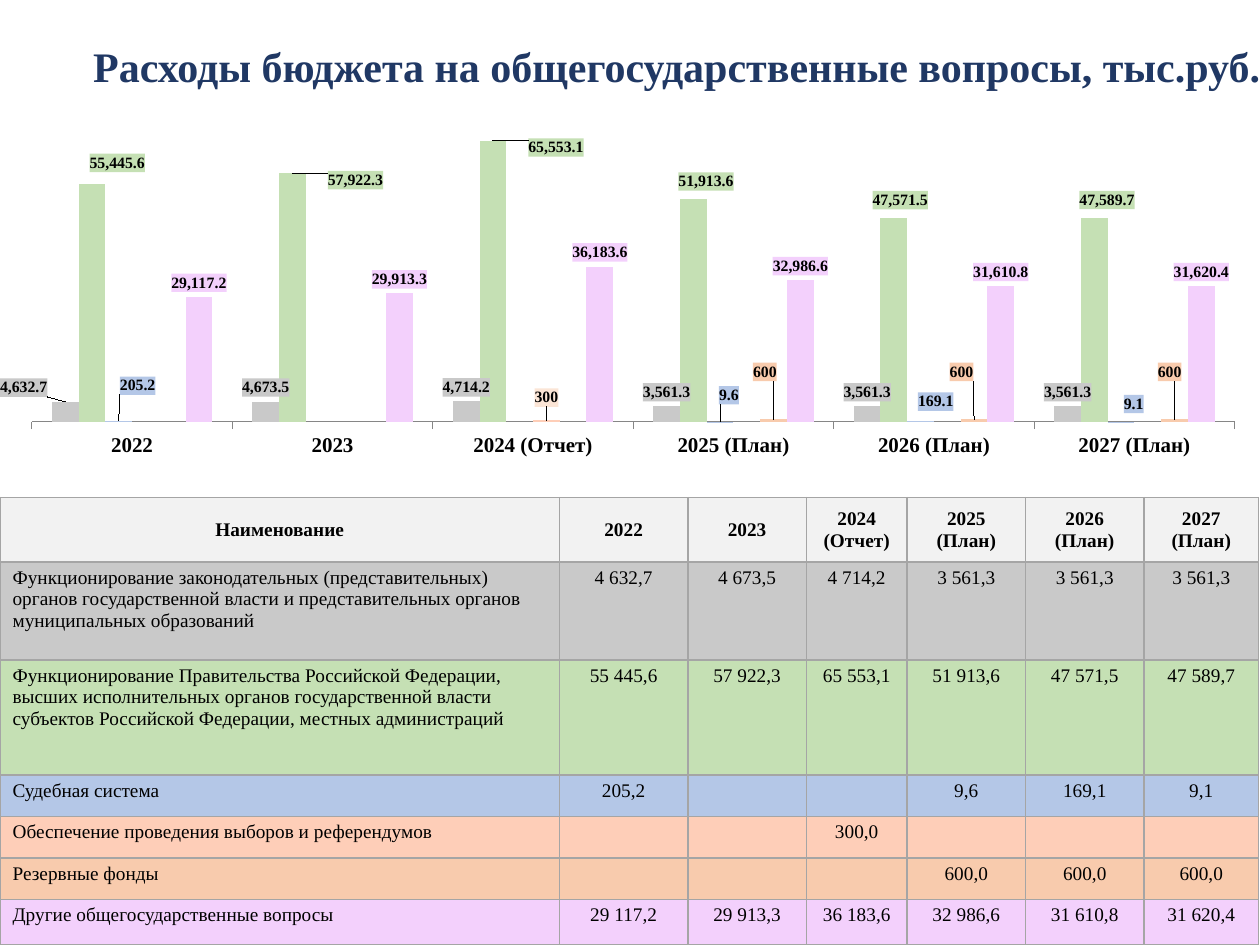
from copy import deepcopy
from dataclasses import dataclass, field

from pptx import Presentation
from pptx.chart.data import CategoryChartData
from pptx.dml.color import RGBColor
from pptx.enum.chart import XL_CHART_TYPE, XL_LABEL_POSITION, XL_TICK_LABEL_POSITION, XL_TICK_MARK
from pptx.enum.text import MSO_ANCHOR, PP_ALIGN
from pptx.oxml import parse_xml
from pptx.oxml.ns import nsdecls, qn
from pptx.util import Inches, Pt

COLUMNS = XL_CHART_TYPE.COLUMN_CLUSTERED
OUTSIDE = XL_LABEL_POSITION.OUTSIDE_END
LOW = XL_TICK_LABEL_POSITION.LOW
TICK_OUT, TICK_NONE = XL_TICK_MARK.OUTSIDE, XL_TICK_MARK.NONE
LEFT, CENTER, RIGHT = PP_ALIGN.LEFT, PP_ALIGN.CENTER, PP_ALIGN.RIGHT
TOP, MIDDLE = MSO_ANCHOR.TOP, MSO_ANCHOR.MIDDLE

SERIF = "Times New Roman"
BLACK, NAVY, GREY, HEADER = "000000", "203864", "A5A5A5", "F2F2F2"
THOUSANDS = "#,##0.0"


@dataclass
class Expense:
    name: str
    color: str
    values: list
    # point index -> label shift as fractions of the chart width and height
    shifts: dict = field(default_factory=dict)
    fmt: str = THOUSANDS
    label_fill: str = ""


YEARS = ["2022", "2023", "2024 (Отчет)", "2025 (План)", "2026 (План)", "2027 (План)"]
EXPENSES = [
    Expense("Функционирование законодательных (представительных) органов государственной "
            "власти и представительных органов муниципальных образований", "C9C9C9",
            [4632.7, 4673.5, 4714.2, 3561.3, 3561.3, 3561.3], {0: (-0.033, 0)}),
    Expense("Функционирование Правительства Российской Федерации, высших исполнительных органов "
            "государственной власти субъектов Российской Федерации, местных администраций",
            "C5E0B4", [55445.6, 57922.3, 65553.1, 51913.6, 47571.5, 47589.7],
            {0: (0.02, -0.02), 1: (0.05, 0.06), 2: (0.05, 0.06),
             3: (0.01, -0.01), 4: (0.005, -0.01), 5: (0.01, -0.01)}),
    Expense("Судебная система", "B4C7E7", [205.2, None, None, 9.6, 169.1, 9.1],
            {0: (0.015, -0.06), 3: (0.007, -0.035), 4: (0.012, -0.015), 5: (0.01, -0.01)},
            "General"),
    Expense("Обеспечение проведения выборов и референдумов", "FECEB8",
            [None, None, 300, None, None, None], {2: (0, -0.025)}, "General", "FBE5D6"),
    Expense("Резервные фонды", "F8CBAD", [None, None, None, 600, 600, 600],
            {3: (-0.007, -0.095), 4: (-0.01, -0.095), 5: (-0.004, -0.095)}, "General"),
    Expense("Другие общегосударственные вопросы", "F3D0FC",
            [29117.2, 29913.3, 36183.6, 32986.6, 31610.8, 31620.4]),
]
COL_WIDTHS = [4.44, 1.02, 0.94, 0.8, 0.94, 0.94, 0.91]
ROW_HEIGHTS = [0.51, 0.78, 0.91, 0.33, 0.33, 0.33, 0.36]


def rgb(value: str) -> RGBColor:
    return RGBColor.from_string(value)


def set_font(font, size: float, color: str = BLACK, bold: bool = False) -> None:
    for name, value in {"name": SERIF, "size": Pt(size), "bold": bold}.items():
        setattr(font, name, value)
    font.color.rgb = rgb(color)


def layout_xml(body: str):
    return parse_xml(f'<c:layout {nsdecls("c")}><c:manualLayout>{body}'
                     '</c:manualLayout></c:layout>')


def add_title(slide, text: str) -> None:
    sp = slide.shapes.add_textbox(Inches(0.25), Inches(0.27), Inches(9.85), Inches(0.5))
    tf = sp.text_frame
    tf.word_wrap = True
    p = tf.paragraphs[0]
    p.alignment = RIGHT
    r = p.add_run()
    r.text = text
    set_font(r.font, 24, NAVY, True)


def style_labels(series, item: Expense) -> None:
    labels = series.data_labels
    options = {"show_value": True, "position": OUTSIDE, "number_format": item.fmt,
               "number_format_is_linked": False}
    for name, value in options.items():
        setattr(labels, name, value)
    set_font(labels.font, 9, bold=True)

    # Coloured label background
    dLbls = series._element.find(qn("c:dLbls"))
    dLbls.find(qn("c:txPr")).addprevious(parse_xml(
        f'<c:spPr {nsdecls("c", "a")}><a:solidFill>'
        f'<a:srgbClr val="{item.label_fill or item.color}"/></a:solidFill></c:spPr>'))

    # Shifted labels share the formatting of their series
    shared = [el for el in dLbls if el.tag != qn("c:showLeaderLines")]
    for pos, (idx, (dx, dy)) in enumerate(item.shifts.items()):
        dLbl = parse_xml(f'<c:dLbl {nsdecls("c")}><c:idx val="{idx}"/></c:dLbl>')
        dLbl.append(layout_xml(f'<c:x val="{dx}"/><c:y val="{dy}"/>'))
        dLbl.extend(deepcopy(el) for el in shared)
        dLbls.insert(pos, dLbl)


def add_expense_chart(slide) -> None:
    data = CategoryChartData()
    data.categories = YEARS
    for i, item in enumerate(EXPENSES, 1):
        data.add_series(f"Series {i}", item.values)
    chart = slide.shapes.add_chart(COLUMNS, Inches(0), Inches(0.91), Inches(10),
                                   Inches(2.77), data).chart
    chart.has_legend = chart.has_title = False
    chart.font.name, chart.font.size = "Calibri", Pt(18)
    chart.font.color.rgb = rgb(BLACK)

    # Axes
    axis = chart.category_axis
    axis.major_tick_mark, axis.minor_tick_mark = TICK_OUT, TICK_NONE
    axis.tick_label_position = LOW
    axis.format.line.color.rgb = rgb("868686")
    set_font(axis.tick_labels.font, 12, bold=True)
    scale = chart.value_axis
    scale.has_major_gridlines = scale.visible = False
    scale.minimum_scale, scale.maximum_scale = 0, 70000
    scale.tick_labels.number_format = THOUSANDS
    scale.tick_labels.number_format_is_linked = False

    # Columns and labels
    plot = chart.plots[0]
    plot.gap_width, plot.overlap, plot.vary_by_categories = 150, 0, False
    for series, item in zip(plot.series, EXPENSES):
        series.format.fill.solid()
        series.format.fill.fore_color.rgb = rgb(item.color)
        style_labels(series, item)

    # Fixed plot area
    area = chart._chartSpace.chart.plotArea
    for old in area.findall(qn("c:layout")):
        area.remove(old)
    area.insert(0, layout_xml(
        '<c:layoutTarget val="inner"/><c:xMode val="edge"/><c:yMode val="edge"/>'
        '<c:x val="0.025"/><c:y val="0.02"/><c:w val="0.955"/><c:h val="0.86"/>'))


def fill_cell(cell, text: str, color: str, align, anchor, bold: bool) -> None:
    cell.text = text
    cell.margin_top = cell.margin_bottom = Inches(0.04)
    cell.vertical_anchor = anchor
    for p in cell.text_frame.paragraphs:
        p.alignment = align
        for r in p.runs:
            set_font(r.font, 11, bold=bold)
        p._p.get_or_add_endParaRPr().set("sz", "1100")
    cell.fill.solid()
    cell.fill.fore_color.rgb = rgb(color)
    tcPr = cell._tc.get_or_add_tcPr()
    for pos, side in enumerate(("lnL", "lnR", "lnT", "lnB")):
        tcPr.insert(pos, parse_xml(
            f'<a:{side} {nsdecls("a")} w="12700"><a:solidFill>'
            f'<a:srgbClr val="{GREY}"/></a:solidFill></a:{side}>'))


def number_text(value) -> str:
    if value is None:
        return ""
    return f"{value:,.1f}".replace(",", " ").replace(".", ",")


def add_expense_table(slide) -> None:
    table = slide.shapes.add_table(len(ROW_HEIGHTS), len(COL_WIDTHS), Inches(0), Inches(3.95),
                                   Inches(10), Inches(3.55)).table
    table.first_row = table.horz_banding = False
    for col, width in zip(table.columns, COL_WIDTHS):
        col.width = Inches(width)
    for row, height in zip(table.rows, ROW_HEIGHTS):
        row.height = Inches(height)

    # Header row, then one row per expense
    for c, text in enumerate(["Наименование"] + YEARS):
        text = text.replace(" (Отчет)", "\n(Отчет)")
        fill_cell(table.cell(0, c), text, HEADER, CENTER, MIDDLE, True)
    for row, item in enumerate(EXPENSES, 1):
        for c, text in enumerate([item.name] + [number_text(v) for v in item.values]):
            fill_cell(table.cell(row, c), text, item.color, CENTER if c else LEFT, TOP, False)


def main() -> None:
    prs = Presentation()
    prs.slide_width, prs.slide_height = Inches(10), Inches(7.5)
    s = prs.slides.add_slide(prs.slide_layouts[6])
    add_title(s, "Расходы бюджета на общегосударственные вопросы, тыс.руб.")
    add_expense_table(s)
    add_expense_chart(s)
    prs.save("out.pptx")


if __name__ == "__main__":
    main()
